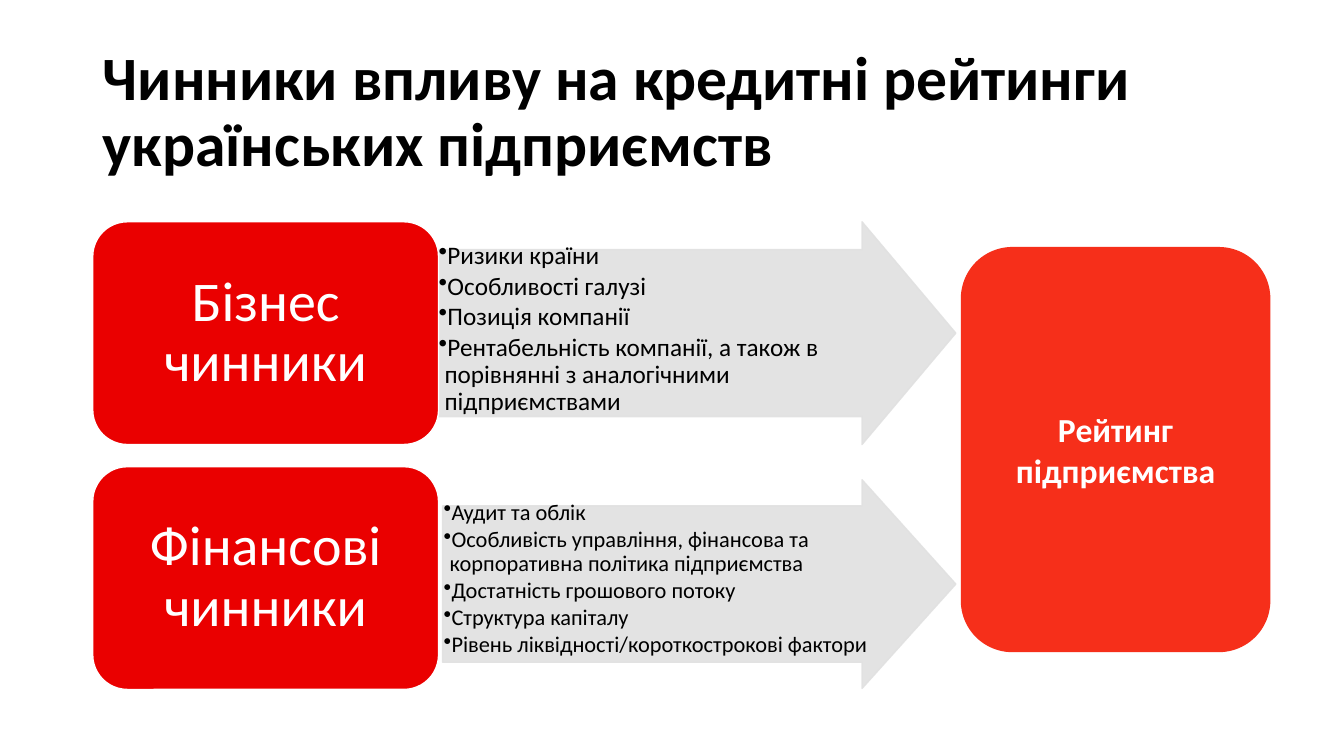
from lxml import etree
from pptx import Presentation
from pptx import util as u
from pptx.dml.color import RGBColor
from pptx.enum import shapes, text
from pptx.oxml.ns import qn

TITLE = "Чинники впливу на кредитні рейтинги українських підприємств"
RESULT = "Рейтинг підприємства"
FACTORS = [
    {"name": "Бізнес чинники", "box_top": 2.2, "size": 18,
     "arrow": (4.34, 2.2, 5.14, 2.21),
     "points": ["Ризики країни", "Особливості галузі", "Позиція компанії",
                "Рентабельність компанії, а також в порівнянні з аналогічними підприємствами"]},
    {"name": "Фінансові чинники", "box_top": 4.63, "size": 16,
     "arrow": (4.39, 4.76, 5.09, 2.07),
     "points": ["Аудит та облік",
                "Особливість управління, фінансова та корпоративна політика підприємства",
                "Достатність грошового потоку", "Структура капіталу",
                "Рівень ліквідності/короткострокові фактори"]},
]
THEME = {"font": "Calibri", "black": "000000", "white": "FFFFFF", "box": "EA0000",
         "arrow": "E1E1E1", "result": "F62F1A", "title_size": 44, "box_size": 40,
         "result_size": 24, "opacity": 90}
BOX_LEFT, BOX_WIDTH, BOX_HEIGHT = 0.92, 3.43, 2.21
HEAD_WIDTH, SHAFT_SHARE = 0.93, 0.75


def color(name):
    return RGBColor.from_string(THEME[name])


def paint(sp, fill, line=None):
    sp.shadow.inherit = False
    sp.fill.solid()
    sp.fill.fore_color.rgb = color(fill)
    if line:
        sp.line.color.rgb = color(line)
        sp.line.width = u.Pt(1)
    else:
        sp.line.fill.background()


def write(sp, lines, size, ink, margins, bold=False, spacing=0.9, after=0,
          align=text.PP_ALIGN.CENTER, anchor=text.MSO_ANCHOR.MIDDLE):
    tf = sp.text_frame
    sides = ("margin_left", "margin_top", "margin_right", "margin_bottom")
    frame = dict(zip(sides, map(u.Inches, margins)))
    frame.update(word_wrap=True, vertical_anchor=anchor)
    for key, value in frame.items():
        setattr(tf, key, value)
    for i, line in enumerate(lines):
        p = tf.add_paragraph() if i else tf.paragraphs[0]
        for key, value in {"alignment": align, "line_spacing": spacing,
                           "space_before": u.Pt(0), "space_after": u.Pt(after)}.items():
            setattr(p, key, value)
        r = p.add_run()
        r.text = line
        for key, value in {"name": THEME["font"], "size": u.Pt(size), "bold": bold}.items():
            setattr(r.font, key, value)
        r.font.color.rgb = color(ink)


def add_bullets(sp):
    for p in sp.text_frame.paragraphs:
        pPr = p._p.get_or_add_pPr()
        pPr.set("marL", str(u.Inches(0.06)))
        pPr.set("indent", str(u.Inches(-0.06)))
        etree.SubElement(pPr, qn("a:buChar")).set("char", "•")


def add_rounded(slide, frame, fill, line=None, corner=0.1667):
    sp = slide.shapes.add_shape(shapes.MSO_SHAPE.ROUNDED_RECTANGLE, *map(u.Inches, frame))
    sp.adjustments[0] = corner
    paint(sp, fill, line)
    return sp


def add_arrow(slide, frame):
    left, top, width, height = frame
    right, neck = left + width, left + width - HEAD_WIDTH
    edge = height * (1 - SHAFT_SHARE) / 2
    upper, lower, bottom = top + edge, top + height - edge, top + height
    outline = [(left, upper), (neck, upper), (neck, top), (right, top + height / 2),
               (neck, bottom), (neck, lower), (left, lower)]
    points = [(u.Inches(x), u.Inches(y)) for x, y in outline]
    builder = slide.shapes.build_freeform(*points[0])
    builder.add_line_segments(points[1:], close=True)
    sp = builder.convert_to_shape()
    paint(sp, "arrow", "arrow")
    for clr in sp._element.spPr.iter(qn("a:srgbClr")):
        etree.SubElement(clr, qn("a:alpha")).set("val", str(THEME["opacity"] * 1000))
    return sp


def main():
    """Build the credit rating factors slide."""
    prs = Presentation()
    prs.slide_width, prs.slide_height = u.Inches(13.33), u.Inches(7.5)
    slide = prs.slides.add_slide(prs.slide_layouts[5])

    title = slide.shapes.title
    for key, value in zip(("left", "top", "width", "height"), (0.92, 0.4, 11.5, 1.45)):
        setattr(title, key, u.Inches(value))
    write(title, [TITLE], THEME["title_size"], "black", (0.1, 0.05, 0.1, 0.05),
          bold=True, align=text.PP_ALIGN.LEFT)

    for factor in FACTORS:
        arrow = add_arrow(slide, factor["arrow"])
        write(arrow, factor["points"], factor["size"], "black", (0.01, 0.21, 0.61, 0.21),
              after=round(factor["size"] * 0.13, 1), align=text.PP_ALIGN.LEFT,
              anchor=text.MSO_ANCHOR.TOP)
        add_bullets(arrow)
        box = add_rounded(slide, (BOX_LEFT, factor["box_top"], BOX_WIDTH, BOX_HEIGHT),
                          "box", "white", corner=0.155)
        write(box, [factor["name"]], THEME["box_size"], "white", (0.14, 0.06, 0.14, 0.06))

    result = add_rounded(slide, (9.53, 2.45, 3.07, 4.02), "result")
    write(result, [RESULT], THEME["result_size"], "white", (0.1, 0.05, 0.1, 0.05),
          bold=True, spacing=1.0)
    prs.save("out.pptx")


if __name__ == "__main__":
    main()
